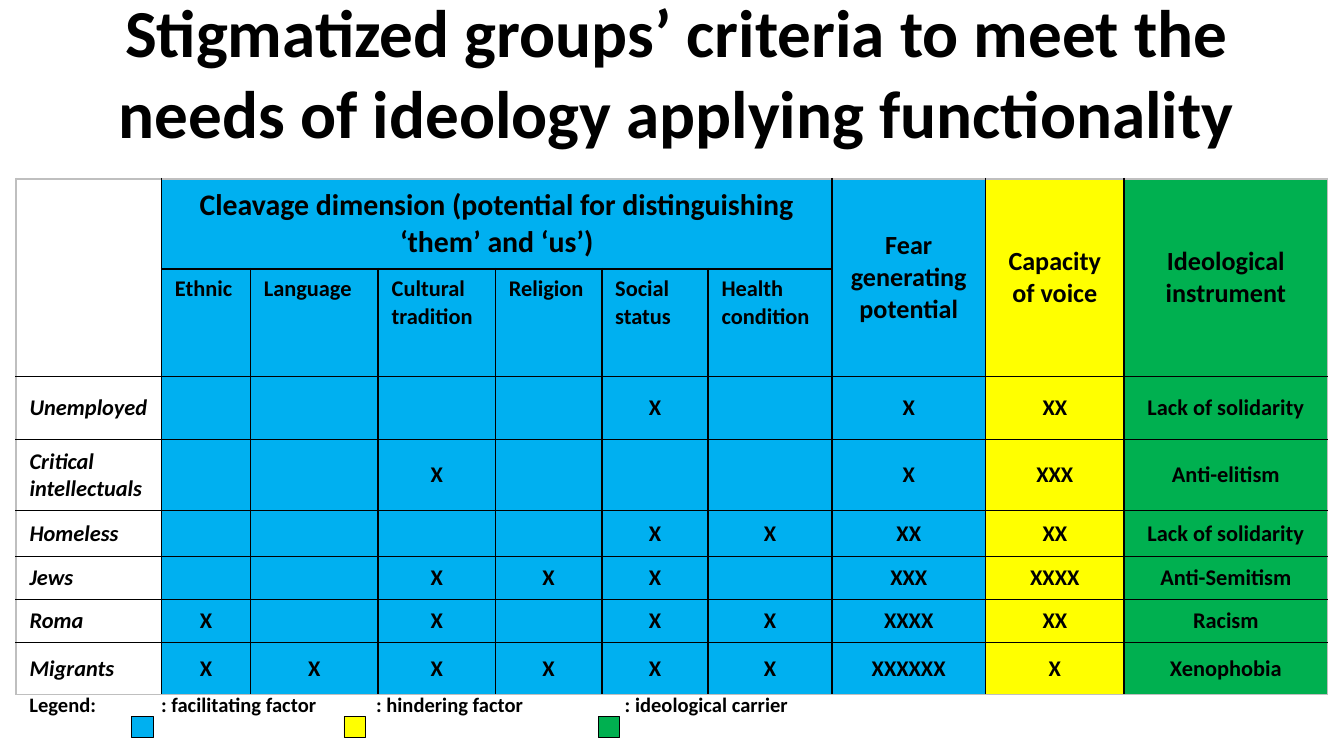
from lxml import etree
from pptx import Presentation
from pptx.dml.color import RGBColor
from pptx.enum.shapes import MSO_SHAPE
from pptx.enum.text import MSO_ANCHOR, PP_ALIGN
from pptx.oxml.ns import qn
from pptx.util import Inches, Pt

LEFT, CENTER = PP_ALIGN.LEFT, PP_ALIGN.CENTER
TOP, MIDDLE = MSO_ANCHOR.TOP, MSO_ANCHOR.MIDDLE
RECTANGLE = MSO_SHAPE.RECTANGLE

# Content
COLORS = {"facilitating": "00B0F0", "hindering": "FFFF00", "carrier": "00B050",
          "ink": "000000", "frame": "BFBFBF"}
FONT = "Calibri"
TITLE = "Stigmatized groups’ criteria to meet the needs of ideology applying functionality"
CLEAVAGE = "Cleavage dimension (potential for distinguishing ‘them’ and ‘us’)"
DIMENSIONS = ["Ethnic", "Language", "Cultural tradition", "Religion",
              "Social status", "Health condition"]
FACTORS = ["Fear generating potential", "Capacity of voice", "Ideological instrument"]
# group, its cleavage dimensions, fear marks, voice marks, ideological instrument
GROUPS = [
    ("Unemployed", ["Social status"], 1, 2, "Lack of solidarity"),
    ("Critical intellectuals", ["Cultural tradition"], 1, 3, "Anti-elitism"),
    ("Homeless", ["Social status", "Health condition"], 2, 2, "Lack of solidarity"),
    ("Jews", ["Cultural tradition", "Religion", "Social status"], 3, 4, "Anti-Semitism"),
    ("Roma", ["Ethnic", "Cultural tradition", "Social status", "Health condition"],
     4, 2, "Racism"),
    ("Migrants", DIMENSIONS, 6, 1, "Xenophobia"),
]
# colour role, label, left of swatch, left of label
LEGEND = [("facilitating", ": facilitating factor", 0.98, 1.2),
          ("hindering", ": hindering factor", 2.56, 2.8),
          ("carrier", ": ideological carrier", 4.45, 4.65)]

# Grid
SLIDE_WIDTH = 10
SLIDE_HEIGHT = SLIDE_WIDTH * 9 / 16
COLUMN_SHARES = [1.08, 0.66, 0.95, 0.87, 0.79, 0.79, 0.92, 1.14, 1.03, 1.51]
ROWS = [0.67, 0.57, 0.47, 0.53, 0.34, 0.32, 0.32, 0.39]
ROLES = [None] + ["facilitating"] * 7 + ["hindering", "carrier"]
MARGIN, TABLE_TOP, INSET = 0.12, 1.33, 0.1
TABLE_WIDTH = SLIDE_WIDTH - 2 * MARGIN
COLUMNS = [TABLE_WIDTH * share / sum(COLUMN_SHARES) for share in COLUMN_SHARES]
FIRST_FACTOR = 1 + len(DIMENSIONS)


def rgb(role):
    return RGBColor.from_string(COLORS[role])


def write(frame, text, size=12, align=LEFT, italic=False):
    """Put bold text in a frame; an empty one keeps the line height of its size."""
    paragraph = frame.paragraphs[0]
    paragraph.alignment = align
    if not text:
        etree.SubElement(paragraph._p, qn("a:endParaRPr"), sz=str(size * 100))
        return paragraph
    run = paragraph.add_run()
    run.text = text
    font = run.font
    font.name, font.size, font.bold, font.italic = FONT, Pt(size), True, italic
    font.color.rgb = rgb("ink")
    return paragraph


def add_text(slide, box, text, anchor=TOP, **style):
    frame = slide.shapes.add_textbox(*map(Inches, box)).text_frame
    frame.word_wrap = True
    frame.vertical_anchor = anchor
    return write(frame, text, **style)


def set_borders(cell, row, column):
    """Black inner rules, grey outer frame."""
    outer = {"lnL": column == 0, "lnR": column == len(COLUMNS) - 1,
             "lnT": row == 0, "lnB": row == len(ROWS) - 1}
    properties = cell._tc.get_or_add_tcPr()
    for position, (side, on_frame) in enumerate(outer.items()):
        line = etree.Element(qn("a:" + side), w=str(Pt(1)))
        fill = etree.SubElement(line, qn("a:solidFill"))
        etree.SubElement(fill, qn("a:srgbClr"),
                         val=COLORS["frame" if on_frame else "ink"])
        properties.insert(position, line)


def table_entries():
    """Yield row, column, text and format of every cell with its own text frame."""
    yield 0, 0, "", {}
    yield 0, 1, CLEAVAGE, {"size": 16, "align": CENTER}
    for column, factor in enumerate(FACTORS, FIRST_FACTOR):
        yield 0, column, factor, {"size": 14, "align": CENTER}
    for column, dimension in enumerate(DIMENSIONS, 1):
        yield 1, column, dimension, {}
    for row, (group, dimensions, fear, voice, instrument) in enumerate(GROUPS, 2):
        yield row, 0, group, {"italic": True}
        marks = ["X" if name in dimensions else "" for name in DIMENSIONS]
        values = marks + ["X" * fear, "X" * voice, instrument]
        for column, value in enumerate(values, 1):
            yield row, column, value, {"align": CENTER}


def add_criteria_table(slide):
    table = slide.shapes.add_table(
        len(ROWS), len(COLUMNS), Inches(MARGIN), Inches(TABLE_TOP),
        Inches(TABLE_WIDTH), Inches(sum(ROWS))).table
    table.first_row = table.horz_banding = False
    for column, width in zip(table.columns, COLUMNS):
        column.width = Inches(width)
    for row, height in zip(table.rows, ROWS):
        row.height = Inches(height)
    for r in range(len(ROWS)):
        for c, role in enumerate(ROLES):
            cell = table.cell(r, c)
            if role:
                cell.fill.solid()
                cell.fill.fore_color.rgb = rgb(role)
            else:
                cell.fill.background()
            set_borders(cell, r, c)
    # Merged headings
    table.cell(0, 1).merge(table.cell(0, len(DIMENSIONS)))
    for c in [0, *range(FIRST_FACTOR, len(COLUMNS))]:
        table.cell(0, c).merge(table.cell(1, c))
    for r, c, text, style in table_entries():
        cell = table.cell(r, c)
        cell.vertical_anchor = TOP if r == 1 else MIDDLE
        write(cell.text_frame, text, **style)


def add_legend(slide):
    text = "\t".join(["Legend:"] + [label for _, label, _, _ in LEGEND])
    paragraph = add_text(slide, (MARGIN, 5.1, 9.21, 0.29), text, size=11)
    stops = etree.SubElement(paragraph._p.get_or_add_pPr(), qn("a:tabLst"))
    for role, _, swatch_left, label_left in LEGEND:
        etree.SubElement(stops, qn("a:tab"), algn="l",
                         pos=str(Inches(label_left - MARGIN - INSET)))
        swatch = slide.shapes.add_shape(
            RECTANGLE, *map(Inches, (swatch_left, 5.33, 0.16, 0.16)))
        swatch.shadow.inherit = False
        swatch.fill.solid()
        swatch.fill.fore_color.rgb = rgb(role)
        swatch.line.color.rgb = rgb("ink")
        swatch.line.width = Pt(0.5)


def main():
    deck = Presentation()
    deck.slide_width, deck.slide_height = Inches(SLIDE_WIDTH), Inches(SLIDE_HEIGHT)
    slide = deck.slides.add_slide(deck.slide_layouts[6])
    add_text(slide, (0.35, 0.06, 9.37, 0.94), TITLE, anchor=MIDDLE, size=36, align=CENTER)
    add_criteria_table(slide)
    add_legend(slide)
    deck.save("out.pptx")


if __name__ == "__main__":
    main()
